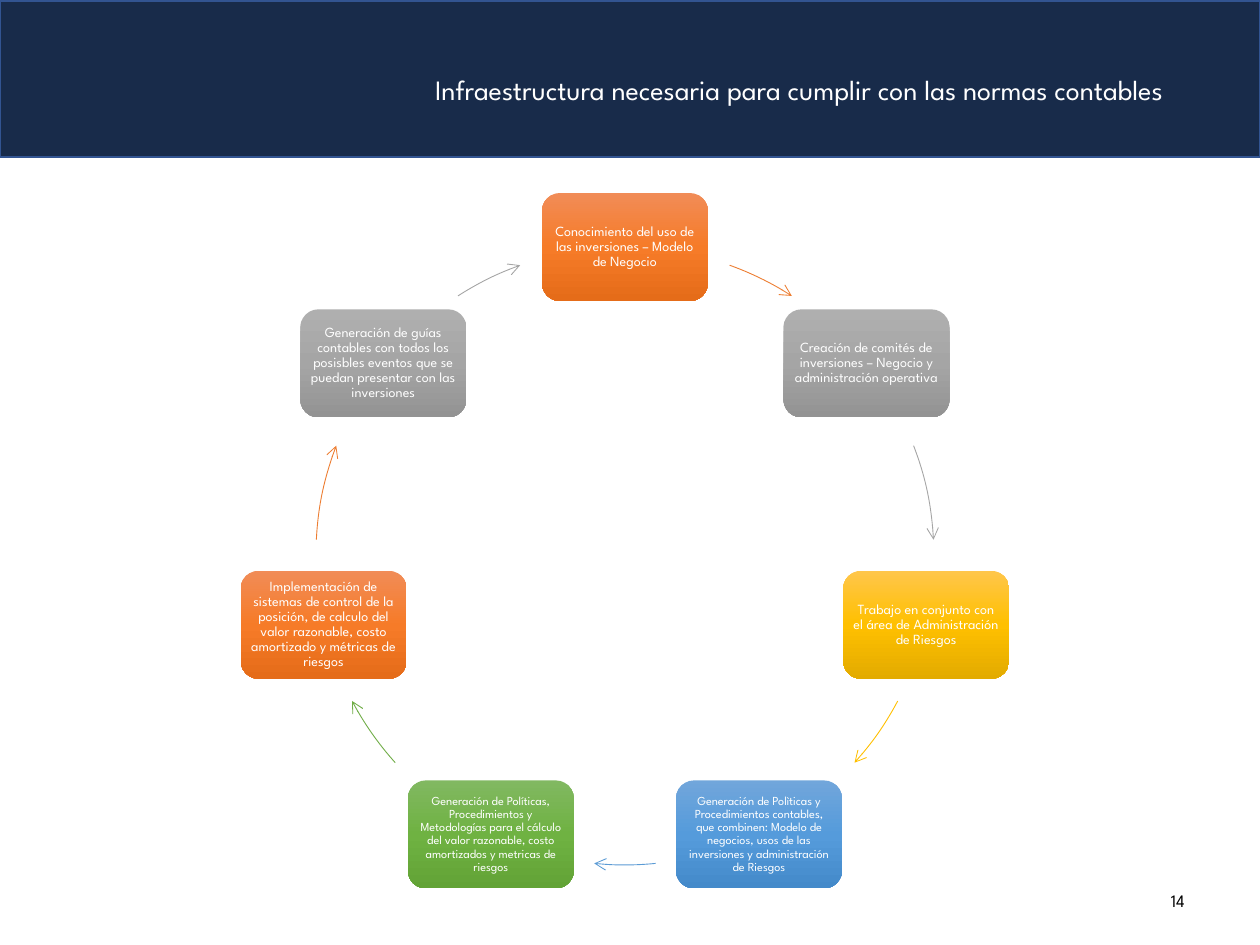
from copy import deepcopy
from math import cos, radians, sin

from lxml.etree import SubElement
from pptx import Presentation
from pptx.dml.color import RGBColor
from pptx.enum.shapes import MSO_SHAPE
from pptx.enum.text import MSO_ANCHOR, MSO_AUTO_SIZE, PP_ALIGN
from pptx.oxml.ns import qn
from pptx.util import Pt

EMU_PER_PX = 914400 / 126
FONT = "League Spartan"
COLORS = {
    "navy": "182B4A", "navy_edge": "325491", "white": "FFFFFF", "black": "000000",
    "orange": "ED7D31", "gray": "A5A5A5", "yellow": "FFC000",
    "blue": "5B9BD5", "green": "70AD47",
}
# Top, middle and bottom shade of each step box
SHADES = {
    "orange": ("F18C57", "F67B28", "E56C19"),
    "gray": ("AFAFAF", "A5A5A5", "939393"),
    "yellow": ("FFC64B", "FFC000", "E3AB00"),
    "blue": ("71A6DB", "559BDB", "448ACA"),
    "green": ("81B861", "6FB242", "62A336"),
}
# Cycle geometry in px
CENTER_X, CENTER_Y, RADIUS = 625, 556, 309
BOX_WIDTH, BOX_HEIGHT = 166, 108

# Text, point size, color, then start and end of the arrow that follows
# (degrees clockwise from the top of the cycle)
STEPS = [
    ("Conocimiento del uso de las inversiones – Modelo de Negocio",
     8, "orange", 19.8, 32.7),
    ("Creación de comités de inversiones – Negocio y administración operativa",
     8, "gray", 69.1, 87),
    ("Trabajo en conjunto con el área de Administración de Riesgos",
     8, "yellow", 118, 132),
    ("Generación de Polìticas y Procedimientos contables, que combinen: Modelo de "
     "negocios, usos de las inversiones y administración de Riesgos",
     7, "blue", 174.3, 185.7),
    ("Generación de Políticas, Procedimientos y Metodologías para el cálculo del "
     "valor razonable, costo amortizados y metricas de riesgos",
     7, "green", 228, 242),
    ("Implementación de sistemas de control de la posición, de calculo del valor "
     "razonable, costo amortizado y métricas de riesgos",
     8, "orange", 273, 290.9),
    ("Generación de guías contables con todos los posisbles eventos que se puedan "
     "presentar con las inversiones",
     8, "gray", 327.3, 340.2),
]


def px(value):
    return round(value * EMU_PER_PX)


def rgb(name):
    return RGBColor.from_string(COLORS[name])


def write(shape, text, size, color, align):
    frame = shape.text_frame
    frame.word_wrap = True
    frame.auto_size = MSO_AUTO_SIZE.NONE
    frame.vertical_anchor = MSO_ANCHOR.MIDDLE
    para = frame.paragraphs[0]
    para.text = text
    para.alignment = align
    para.font.name = FONT
    para.font.size = Pt(size)
    para.font.color.rgb = rgb(color)
    return para


def add_shape(page, kind, left, top, width, height):
    shape = page.shapes.add_shape(kind, px(left), px(top), px(width), px(height))
    shape.shadow.inherit = False
    return shape


def add_banner(page):
    banner = add_shape(page, MSO_SHAPE.RECTANGLE, 0, 1, 1260, 156)
    banner.fill.solid()
    banner.fill.fore_color.rgb = rgb("navy")
    banner.line.color.rgb = rgb("navy_edge")
    banner.line.width = Pt(1)
    page.shapes._spTree.insert(2, banner._element)  # behind the title


def format_title(page, text):
    title = page.shapes.title
    title.left, title.top, title.width, title.height = map(px, (90, 16, 1086, 183))
    write(title, text, 16, "white", PP_ALIGN.RIGHT).line_spacing = 0.9
    title.text_frame.margin_bottom = px(38)


def add_page_number(page, text):
    box = page.shapes.add_textbox(px(903), px(876), px(294), px(50))
    write(box, text, 10, "black", PP_ALIGN.RIGHT)


def fill_gradient(shape, shades):
    fill = shape.fill
    fill.gradient()
    fill.gradient_angle = 270
    stop_list = shape._element.spPr.find(qn("a:gradFill")).find(qn("a:gsLst"))
    stop_list.insert(1, deepcopy(stop_list[0]))
    for stop, position, shade in zip(fill.gradient_stops, (0, 0.5, 1), shades):
        stop.position = position
        stop.color.rgb = RGBColor.from_string(shade)


def add_step(page, angle, text, size, color):
    left = CENTER_X + RADIUS * sin(radians(angle)) - BOX_WIDTH / 2
    top = CENTER_Y - RADIUS * cos(radians(angle)) - BOX_HEIGHT / 2
    box = add_shape(page, MSO_SHAPE.ROUNDED_RECTANGLE, left, top, BOX_WIDTH, BOX_HEIGHT)
    fill_gradient(box, SHADES[color])
    box.line.fill.background()
    write(box, text, size, "white", PP_ALIGN.CENTER).line_spacing = 0.9
    frame = box.text_frame
    frame.margin_left = frame.margin_right = px(4)
    frame.margin_top = frame.margin_bottom = px(4)


def add_arc_arrow(page, start, end, color):
    arc = add_shape(page, MSO_SHAPE.ARC, CENTER_X - RADIUS, CENTER_Y - RADIUS,
                    2 * RADIUS, 2 * RADIUS)
    # Arc angles run from the right-hand side, in units of 0.6 per degree
    for index, angle in enumerate((start, end)):
        arc.adjustments[index] = (angle - 90) % 360 * 0.6
    arc.fill.background()
    arc.line.color.rgb = rgb(color)
    arc.line.width = Pt(0.5)
    SubElement(arc.line._get_or_add_ln(), qn("a:tailEnd"), type="arrow")


def main():
    deck = Presentation()
    deck.slide_width, deck.slide_height = px(1260), px(945)
    page = deck.slides.add_slide(deck.slide_layouts[5])

    # Heading and page number
    add_banner(page)
    format_title(page, "Infraestructura necesaria para cumplir con las normas contables")
    add_page_number(page, "14")

    # Cycle of steps, each followed by its arrow
    for index, (text, size, color, start, end) in enumerate(STEPS):
        add_step(page, index * 360 / len(STEPS), text, size, color)
        add_arc_arrow(page, start, end, color)

    deck.save("out.pptx")


if __name__ == "__main__":
    main()
